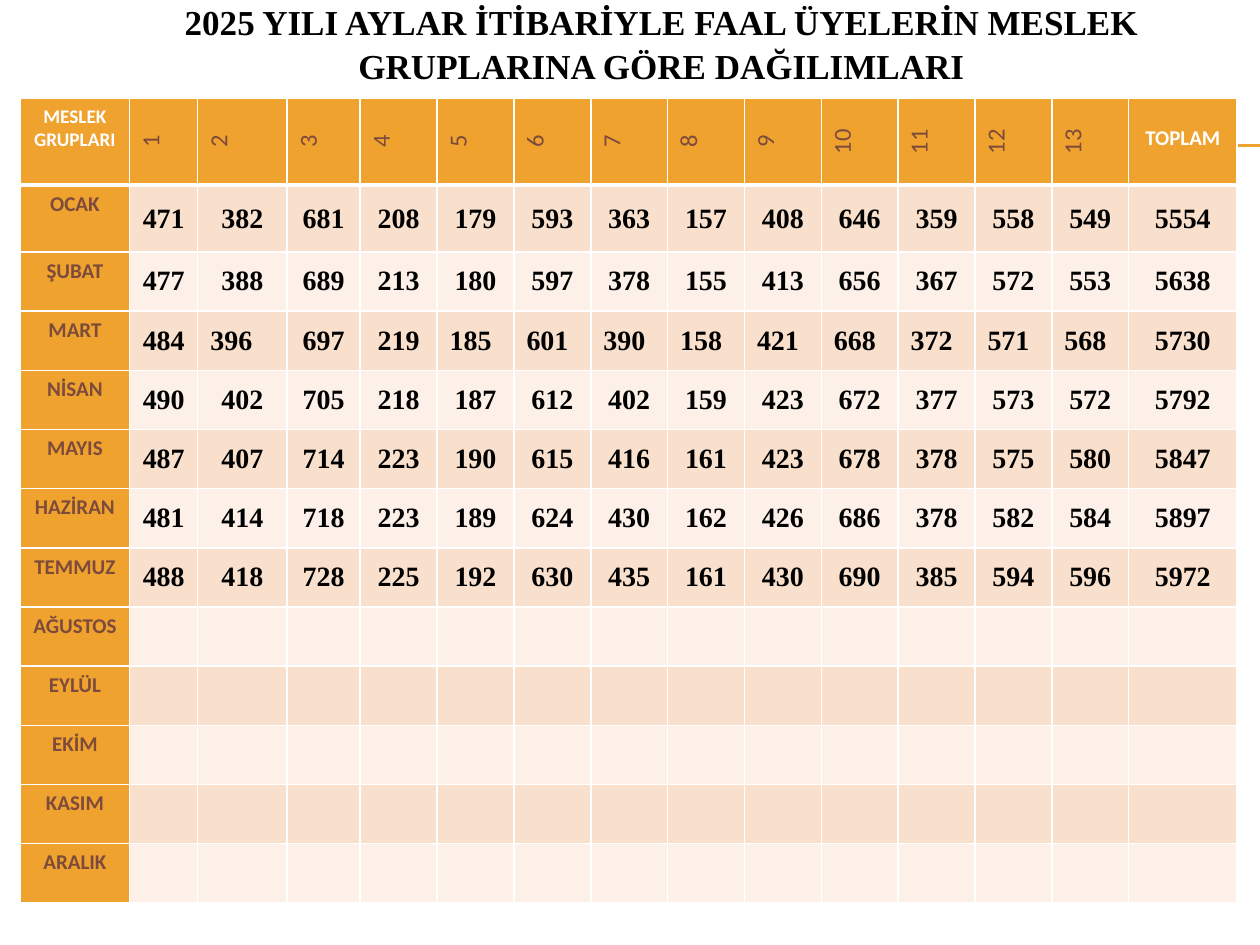
from lxml.etree import SubElement
from pptx import Presentation
from pptx.dml.color import RGBColor
from pptx.enum.shapes import MSO_CONNECTOR
from pptx.enum.text import MSO_ANCHOR as ANCHOR, PP_ALIGN as ALIGN
from pptx.oxml.ns import qn
from pptx.util import Inches, Pt

TITLE = "2025 YILI AYLAR İTİBARİYLE FAAL ÜYELERİN MESLEK GRUPLARINA GÖRE DAĞILIMLARI"
HEADER = ["MESLEK GRUPLARI", *map(str, range(1, 14)), "TOPLAM"]
MONTHS = [
    ("OCAK", [471, 382, 681, 208, 179, 593, 363, 157, 408, 646, 359, 558, 549, 5554]),
    ("ŞUBAT", [477, 388, 689, 213, 180, 597, 378, 155, 413, 656, 367, 572, 553, 5638]),
    ("MART", [484, 396, 697, 219, 185, 601, 390, 158, 421, 668, 372, 571, 568, 5730]),
    ("NİSAN", [490, 402, 705, 218, 187, 612, 402, 159, 423, 672, 377, 573, 572, 5792]),
    ("MAYIS", [487, 407, 714, 223, 190, 615, 416, 161, 423, 678, 378, 575, 580, 5847]),
    ("HAZİRAN", [481, 414, 718, 223, 189, 624, 430, 162, 426, 686, 378, 582, 584, 5897]),
    ("TEMMUZ", [488, 418, 728, 225, 192, 630, 435, 161, 430, 690, 385, 594, 596, 5972]),
    ("AĞUSTOS", []),
    ("EYLÜL", []),
    ("EKİM", []),
    ("KASIM", []),
    ("ARALIK", []),
]
LEFT_ALIGNED = {("MART", col) for col in (2, *range(5, 14))}

COLORS = {"accent": "F0A22E", "brown": "7C4B3B", "white": "FFFFFF", "black": "000000",
          "odd": "F9E0CD", "even": "FCF0E8"}
SANS, SERIF = "Calibri", "Times New Roman"
COL_WIDTHS = [0.87, 0.54, 0.71, 0.58] + [0.61] * 10 + [0.86]
ROW_HEIGHTS = [0.69, 0.53] + [0.47] * 11


def rgb(name):
    return RGBColor.from_string(COLORS[name])


def write(tf, text, size, font, color, bold=True, align=ALIGN.CENTER):
    p = tf.paragraphs[0]
    p.alignment = align
    r = p.add_run()
    r.text = text
    r.font.size, r.font.name, r.font.bold = Pt(size), font, bold
    r.font.color.rgb = rgb(color)
    return p


def set_borders(cell, top, bottom):
    """Draw white cell edges; top and bottom are widths in points."""
    tc_pr = cell._tc.get_or_add_tcPr()
    for side, width in (("L", 1), ("R", 1), ("T", top), ("B", bottom)):
        ln = SubElement(tc_pr, qn(f"a:ln{side}"), w=str(Pt(width)))
        SubElement(SubElement(ln, qn("a:solidFill")), qn("a:srgbClr"), val=COLORS["white"])


def style_cell(cell, row, fill):
    set_borders(cell, 3 if row == 1 else 1, 3 if row == 0 else 1)
    cell.fill.solid()
    cell.fill.fore_color.rgb = rgb(fill)


def narrow_margins(cell):
    cell.margin_left = cell.margin_right = Inches(0.05)


def add_rule(s, y):
    line = s.shapes.add_connector(MSO_CONNECTOR.STRAIGHT, Inches(0.56), Inches(y), Inches(10), Inches(y))
    line.line.color.rgb = rgb("accent")
    line.line.width = Pt(0.75)
    SubElement(line._element.spPr, qn("a:effectLst"))


def add_title(s):
    tf = s.shapes.add_textbox(Inches(0.5), 0, Inches(9.5), Inches(0.67)).text_frame
    tf.word_wrap = True
    tf.vertical_anchor = ANCHOR.MIDDLE
    write(tf, TITLE, 20, SERIF, "black").line_spacing = 1.05


def fill_header(table):
    last = len(HEADER) - 1
    for col, text in enumerate(HEADER):
        cell = table.cell(0, col)
        style_cell(cell, 0, "accent")
        if col in (0, last):
            narrow_margins(cell)
            write(cell.text_frame, text, 12 if col else 11, SANS, "white")
        else:
            cell._tc.get_or_add_tcPr().set("vert", "vert270")
            write(cell.text_frame, text, 14, SANS, "brown", bold=False)
    cell.vertical_anchor = ANCHOR.BOTTOM
    cell.margin_bottom = Inches(0.27)


def fill_month(table, row, month, values):
    for col in range(len(HEADER)):
        cell = table.cell(row, col)
        style_cell(cell, row, "accent" if col == 0 else "odd" if row % 2 else "even")
        if col == 0:
            narrow_margins(cell)
            write(cell.text_frame, month, 12, SANS, "brown")
        elif values:
            cell.vertical_anchor = ANCHOR.MIDDLE
            to_left = (month, col) in LEFT_ALIGNED
            if not to_left:
                narrow_margins(cell)
            write(cell.text_frame, str(values[col - 1]), 16, SERIF, "black",
                  align=ALIGN.LEFT if to_left else ALIGN.CENTER)


def add_member_table(s):
    table = s.shapes.add_table(len(ROW_HEIGHTS), len(COL_WIDTHS), Inches(0.16), Inches(0.78),
                               Inches(sum(COL_WIDTHS)), Inches(sum(ROW_HEIGHTS))).table
    for column, width in zip(table.columns, COL_WIDTHS):
        column.width = Inches(width)
    for row, height in zip(table.rows, ROW_HEIGHTS):
        row.height = Inches(height)
    fill_header(table)
    for row, (month, values) in enumerate(MONTHS, 1):
        fill_month(table, row, month, values)


def main():
    prs = Presentation()
    prs.slide_width, prs.slide_height = Inches(10), Inches(7.5)
    s = prs.slides.add_slide(prs.slide_layouts[6])
    for y in (1.15, 1.16):
        add_rule(s, y)
    add_title(s)
    add_member_table(s)
    prs.save("out.pptx")


if __name__ == "__main__":
    main()
